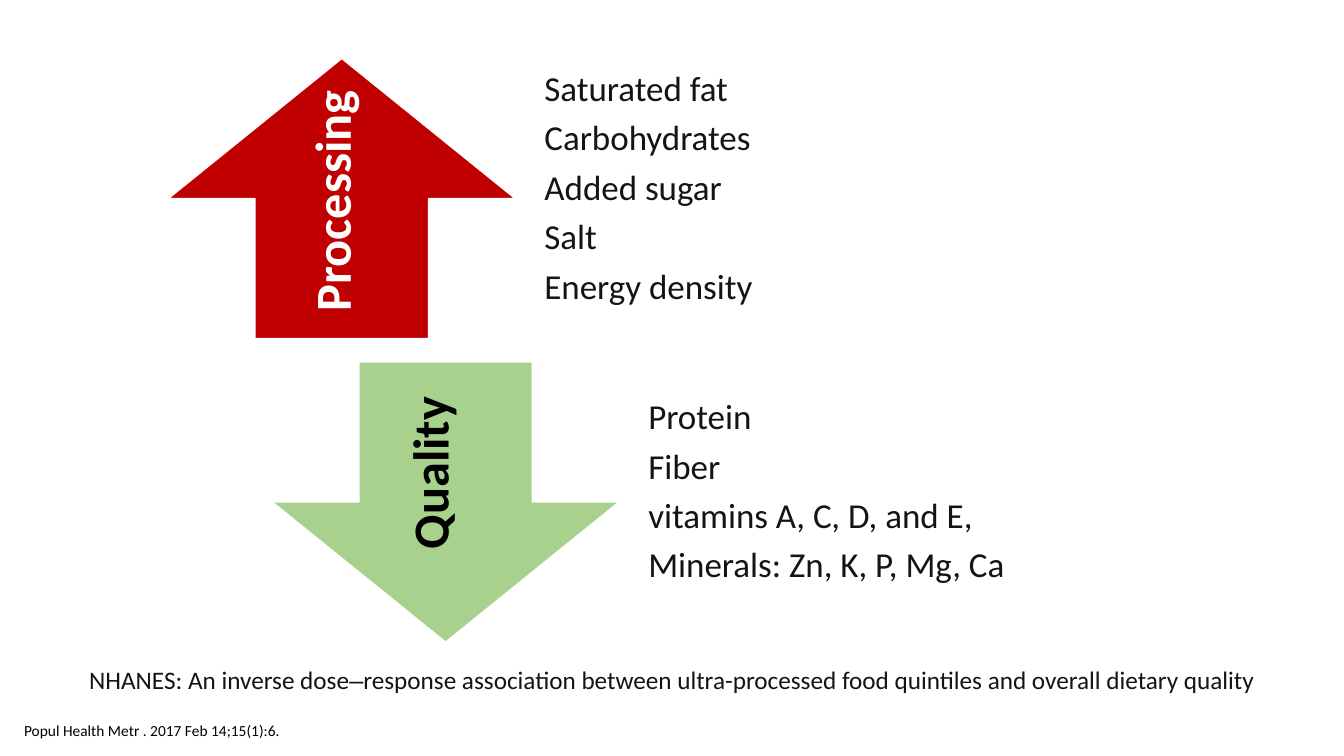
import pptx
import pptx.util
import pptx.dml.color
import pptx.enum.shapes
import pptx.enum.text

RGBColor = pptx.dml.color.RGBColor
Inches = pptx.util.Inches
Pt = pptx.util.Pt
ARROW = pptx.enum.shapes.MSO_SHAPE
ALIGN = pptx.enum.text.PP_ALIGN
ANCHOR = pptx.enum.text.MSO_ANCHOR

RED = RGBColor(0xC0, 0x00, 0x00)
GREEN = RGBColor(0xA9, 0xD1, 0x8E)
WHITE = RGBColor(0xFF, 0xFF, 0xFF)
BLACK = RGBColor(0x00, 0x00, 0x00)
INK = RGBColor(0x13, 0x14, 0x13)

TRENDS = [
    {
        "arrow": ARROW.UP_ARROW, "fill": RED,
        "nutrients": ["Saturated fat", "Carbohydrates", "Added sugar", "Salt",
                      "Energy density"],
        "label": "Processing", "label_color": WHITE,
        "label_box": (1.98, 1.53, 2.61, 0.71), "label_align": ALIGN.LEFT,
    },
    {
        "arrow": ARROW.DOWN_ARROW, "fill": GREEN,
        "nutrients": ["Protein", "Fiber", "vitamins A, C, D, and E,",
                      "Minerals: Zn, K, P, Mg, Ca"],
        "label": "Quality ", "label_color": BLACK,
        "label_box": (3.19, 4.28, 2.13, 0.71), "label_align": ALIGN.CENTER,
    },
]
FINDING = [
    ("NHANES: An inverse dose", "Calibri"),
    ("–", "Arial"),
    ("response association between ultra-processed food quintiles "
     "and overall dietary quality", "Calibri"),
]
CITATION = "Popul Health Metr . 2017 Feb 14;15(1):6."

SLIDE_W, SLIDE_H = 13.33, 7.5
ARROW_W, ARROW_H = 3.44, 2.78
LIST_W, LIST_GAP = 5.83, 0.1
FIRST_LEFT, FIRST_TOP = 1.67, 0.58
STEP_X, STEP_Y = 1.03, 3.01
MARGIN = 0.14


def add_text(slide, box, paragraphs, size, color=INK, bold=False,
             align=ALIGN.LEFT, anchor=ANCHOR.TOP, insets=(0.1, 0.05, 0.1, 0.05),
             line_spacing=None, space_after=None, rotation=0, wrap=True):
    area = slide.shapes.add_textbox(*map(Inches, box))
    area.rotation = rotation
    frame = area.text_frame
    frame.word_wrap = wrap
    frame.vertical_anchor = anchor
    (frame.margin_left, frame.margin_top,
     frame.margin_right, frame.margin_bottom) = map(Inches, insets)
    for index, content in enumerate(paragraphs):
        paragraph = frame.add_paragraph() if index else frame.paragraphs[0]
        paragraph.alignment = align
        paragraph.line_spacing = line_spacing
        paragraph.space_after = space_after
        runs = [(content, "Calibri")] if isinstance(content, str) else content
        for words, font_name in runs:
            run = paragraph.add_run()
            run.text = words
            run.font.name = font_name
            run.font.size = Pt(size)
            run.font.bold = bold
            run.font.color.rgb = color


def add_trend(slide, trend, left, top):
    arrow = slide.shapes.add_shape(
        trend["arrow"], *map(Inches, (left, top, ARROW_W, ARROW_H)))
    arrow.shadow.inherit = False
    arrow.fill.solid()
    arrow.fill.fore_color.rgb = trend["fill"]
    arrow.line.color.rgb = WHITE
    arrow.line.width = Pt(1)
    add_text(slide, (left + ARROW_W + LIST_GAP, top, LIST_W, ARROW_H),
             trend["nutrients"], 25, anchor=ANCHOR.MIDDLE,
             insets=(0.19, 0, 0.19, 0.19), line_spacing=0.9,
             space_after=Pt(8.3))
    add_text(slide, trend["label_box"], [trend["label"]], 36,
             color=trend["label_color"], bold=True,
             align=trend["label_align"], rotation=270)


def main():
    deck = pptx.Presentation()
    deck.slide_width, deck.slide_height = Inches(SLIDE_W), Inches(SLIDE_H)
    slide = deck.slides.add_slide(deck.slide_layouts[6])
    for row, trend in enumerate(TRENDS):
        add_trend(slide, trend, FIRST_LEFT + row * STEP_X,
                  FIRST_TOP + row * STEP_Y)
    add_text(slide, (MARGIN, 6.54, SLIDE_W - 2 * MARGIN, 0.4), [FINDING], 18,
             align=ALIGN.CENTER)
    add_text(slide, (MARGIN, 7.1, 2.8, 0.29), [CITATION], 11, color=BLACK,
             wrap=False)
    deck.save("out.pptx")


if __name__ == "__main__":
    main()
